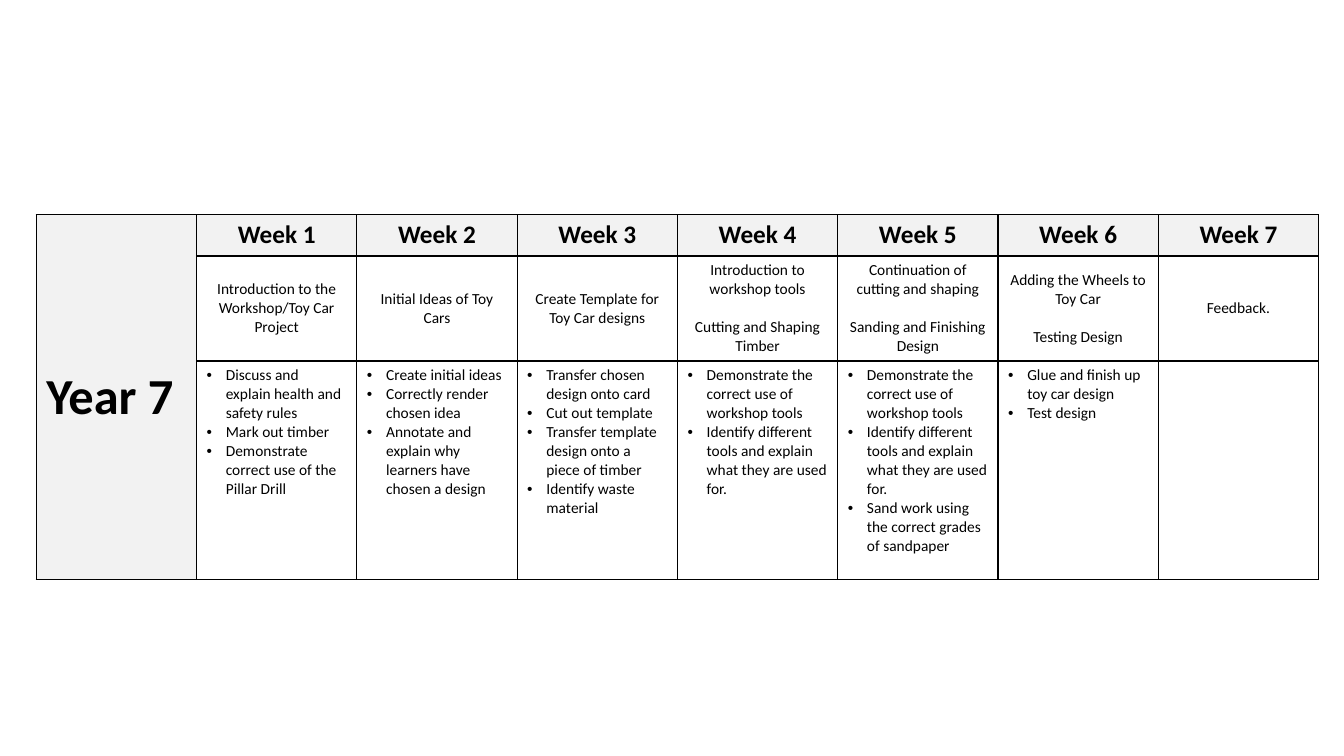
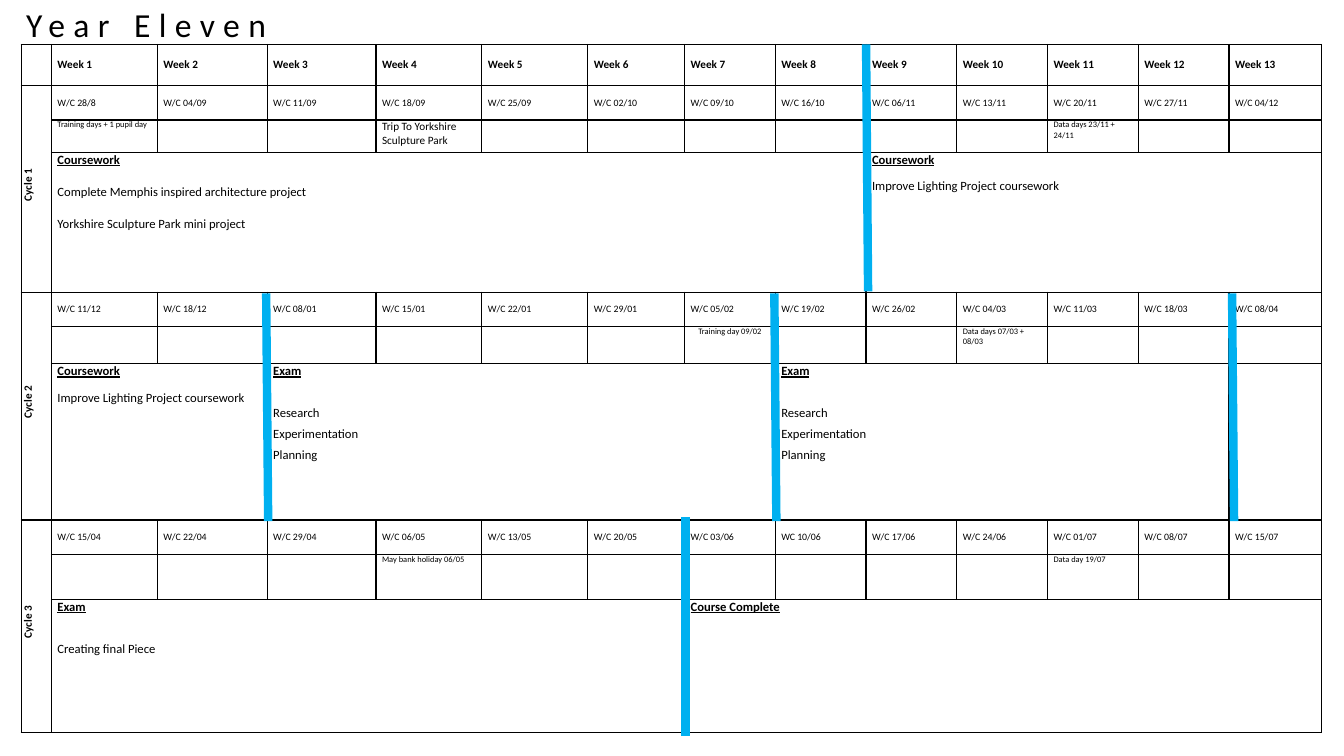
from lxml import etree
from pptx import Presentation, util as u
from pptx.dml.color import RGBColor
from pptx.enum import shapes, text
from pptx.oxml.ns import qn

COLORS = {"ink": "000000", "paper": "FFFFFF", "heading": "F2F2F2", "divider": "00B0F0"}
FONT = "Calibri"
CENTER = text.PP_ALIGN.CENTER
MIDDLE = text.MSO_ANCHOR.MIDDLE

YEAR_7_WEEKS = [
    (["Introduction to the Workshop/Toy Car Project"],
     ["Discuss and explain health and safety rules", "Mark out timber",
      "Demonstrate correct use of the Pillar Drill"]),
    (["Initial Ideas of Toy Cars"],
     ["Create initial ideas", "Correctly render chosen idea",
      "Annotate and explain why learners have chosen a design"]),
    (["Create Template for Toy Car designs"],
     ["Transfer chosen design onto card", "Cut out template",
      "Transfer template design onto a piece of timber", "Identify waste material"]),
    (["Introduction to workshop tools", "Cutting and Shaping Timber"],
     ["Demonstrate the correct use of workshop tools",
      "Identify different tools and explain what they are used for."]),
    (["Continuation of cutting and shaping", "Sanding and Finishing Design"],
     ["Demonstrate the correct use of workshop tools",
      "Identify different tools and explain what they are used for.",
      "Sand work using the correct grades of sandpaper"]),
    (["Adding the Wheels to Toy Car", "Testing Design"],
     ["Glue and finish up toy car design", "Test design"]),
    (["Feedback."], []),
]

EXAM_STAGES = ["Research", "Experimentation", "Planning"]
LIGHTING = ["Improve Lighting Project coursework"]
CYCLES = [
    {
        "dates": ["W/C 28/8", "W/C 04/09", "W/C 11/09", "W/C 18/09", "W/C 25/09", "W/C 02/10",
                  "W/C 09/10", "W/C 16/10", "W/C 06/11", "W/C 13/11", "W/C 20/11", "W/C 27/11",
                  "W/C 04/12"],
        "notes": {1: ("Training days + 1 pupil day", 6, None),
                  4: ("Trip To Yorkshire Sculpture Park", 8, None),
                  11: ("Data days 23/11 + 24/11", 6, None)},
        "blocks": [(1, 8, "Coursework", ["Complete Memphis inspired architecture project",
                                         "Yorkshire Sculpture Park mini project"], 12, 12),
                   (9, 13, "Coursework", LIGHTING, 8, 0)],
    },
    {
        "dates": ["W/C 11/12", "W/C 18/12", "W/C 08/01", "W/C 15/01", "W/C 22/01", "W/C 29/01",
                  "W/C 05/02", "W/C 19/02", "W/C 26/02", "W/C 04/03", "W/C 11/03", "W/C 18/03",
                  "W/C 08/04"],
        "notes": {7: ("Training day 09/02", 6, CENTER),
                  10: ("Data days 07/03 + 08/03", 6, None)},
        "blocks": [(1, 2, "Coursework", LIGHTING, 8, 0),
                   (3, 7, "Exam", EXAM_STAGES, 19, 4),
                   (8, 12, "Exam", EXAM_STAGES, 19, 4)],
    },
    {
        "dates": ["W/C 15/04", "W/C 22/04", "W/C 29/04", "W/C 06/05", "W/C 13/05", "W/C 20/05",
                  "W/C 03/06", "WC 10/06", "W/C 17/06", "W/C 24/06", "W/C 01/07", "W/C 08/07",
                  "W/C 15/07"],
        "notes": {4: ("May bank holiday 06/05", 6, None), 11: ("Data day 19/07", 6, None)},
        "blocks": [(1, 6, "Exam", ["Creating final Piece"], 19, 0),
                   (7, 13, "Course Complete", [], 0, 0)],
    },
]
DIVIDERS = [
    (8.59, 0.44, 8.61, 2.89),
    (2.64, 2.91, 2.66, 5.17),
    (7.68, 2.91, 7.7, 5.17),
    (6.8, 5.13, 6.8, 7.3),
    (12.22, 2.91, 12.24, 5.17),
]


def color(name):
    return RGBColor.from_string(COLORS[name])


def style_font(font, size, bold=False, underline=None):
    font.name = FONT
    font.size = u.Pt(size)
    font.bold = bold
    font.underline = underline
    font.color.rgb = color("ink")


def outline_cell(cell):
    properties = cell._tc.get_or_add_tcPr()
    for side in ("a:lnL", "a:lnR", "a:lnT", "a:lnB"):
        border = etree.SubElement(properties, qn(side), w=str(u.Pt(1)))
        fill = etree.SubElement(border, qn("a:solidFill"))
        etree.SubElement(fill, qn("a:srgbClr"), val=COLORS["ink"])


def add_grid(slide, left, top, widths, heights, margins):
    frame = slide.shapes.add_table(len(heights), len(widths), u.Inches(left), u.Inches(top),
                                   u.Inches(sum(widths)), u.Inches(sum(heights)))
    table = frame.table
    table.first_row = False
    table.horz_banding = False
    for column, width in zip(table.columns, widths):
        column.width = u.Inches(width)
    for row, height in zip(table.rows, heights):
        row.height = u.Inches(height)
    side, end = margins
    for cell in table.iter_cells():
        outline_cell(cell)
        fill_cell(cell, "paper")
        cell.margin_left = cell.margin_right = u.Inches(side)
        cell.margin_top = cell.margin_bottom = u.Inches(end)
    return table


def fill_cell(cell, name):
    cell.fill.solid()
    cell.fill.fore_color.rgb = color(name)


def add_bullet(paragraph):
    properties = paragraph._p.get_or_add_pPr()
    properties.set("marL", str(u.Inches(0.19)))
    properties.set("indent", str(u.Inches(-0.19)))
    etree.SubElement(properties, qn("a:buFont"), typeface="Arial")
    etree.SubElement(properties, qn("a:buChar"), char="•")


def write_cell(cell, lines, size, bold=False, align=None, anchor=None, gap=0, bullets=False):
    cell.vertical_anchor = anchor
    frame = cell.text_frame
    for index, line in enumerate(lines):
        paragraph = frame.add_paragraph() if index else frame.paragraphs[0]
        paragraph.text = line
        paragraph.alignment = align
        if index and gap:
            paragraph.space_before = u.Pt(gap)
        if bullets:
            add_bullet(paragraph)
        style_font(paragraph.font, size, bold)


def write_block(table, row, block):
    first, last, heading, lines, heading_gap, line_gap = block
    cell = table.cell(row, first)
    cell.merge(table.cell(row, last))
    write_cell(cell, [heading, *lines], 9, gap=line_gap)
    paragraphs = cell.text_frame.paragraphs
    style_font(paragraphs[0].font, 9, bold=True, underline=True)
    if lines:
        paragraphs[1].space_before = u.Pt(heading_gap)


def write_cycle(table, number, cycle):
    row = 3 * number - 2
    label = table.cell(row, 0)
    label.merge(table.cell(row + 2, 0))
    write_cell(label, [f"Cycle {number}"], 8, bold=True, align=CENTER, anchor=MIDDLE)
    label._tc.get_or_add_tcPr().set("vert", "vert270")
    label.text_frame.paragraphs[0]._p.get_or_add_pPr().set("marL", str(u.Inches(0.08)))
    for column, date in enumerate(cycle["dates"], 1):
        write_cell(table.cell(row, column), [date], 7, anchor=MIDDLE)
    for column, (note, size, align) in cycle["notes"].items():
        write_cell(table.cell(row + 1, column), [note], size, align=align)
    for block in cycle["blocks"]:
        write_block(table, row + 2, block)


def add_divider(slide, ends):
    line = slide.shapes.add_connector(shapes.MSO_CONNECTOR.STRAIGHT, *map(u.Inches, ends))
    line.line.color.rgb = color("divider")
    line.line.width = u.Pt(6)
    etree.SubElement(line._element.spPr, qn("a:effectLst"))


def add_title(slide, title):
    box = slide.shapes.add_textbox(u.Inches(0.16), u.Inches(-0.01), u.Inches(4.43), u.Inches(0.5))
    frame = box.text_frame
    frame.word_wrap = True
    run = frame.paragraphs[0].add_run()
    run.text = title
    style_font(run.font, 24)
    run._r.get_or_add_rPr().set("spc", "600")


def build_year_7(slide):
    table = add_grid(slide, 0.36, 2.13, [1.59] * 8, [0.41, 1.04, 2.17], (0.1, 0.05))
    year = table.cell(0, 0)
    year.merge(table.cell(2, 0))
    fill_cell(year, "heading")
    write_cell(year, ["Year 7"], 36, bold=True, anchor=MIDDLE)
    for week, (topics, tasks) in enumerate(YEAR_7_WEEKS, 1):
        heading = table.cell(0, week)
        fill_cell(heading, "heading")
        write_cell(heading, [f"Week {week}"], 18, bold=True, align=CENTER)
        write_cell(table.cell(1, week), topics, 11, align=CENTER, anchor=MIDDLE, gap=13.4)
        write_cell(table.cell(2, week), tasks, 11, bullets=True)


def build_year_11(slide):
    widths = [0.3, 1.05, 1.09, 1.08, 1.05, 1.05, 0.96] + [0.9] * 6 + [0.92]
    heights = [0.41, 0.34, 0.32, 1.39, 0.34, 0.37, 1.55, 0.34, 0.45, 1.32]
    table = add_grid(slide, 0.21, 0.44, widths, heights, (0.06, 0))
    for week in range(1, 14):
        write_cell(table.cell(0, week), [f"Week {week}"], 8, bold=True, anchor=MIDDLE)
    for number, cycle in enumerate(CYCLES, 1):
        write_cycle(table, number, cycle)
    for ends in DIVIDERS:
        add_divider(slide, ends)
    add_title(slide, "Year Eleven")


def main():
    presentation = Presentation()
    presentation.slide_width = u.Inches(13.33)
    presentation.slide_height = u.Inches(7.5)
    for build in (build_year_7, build_year_11):
        build(presentation.slides.add_slide(presentation.slide_layouts[6]))
    presentation.save("out.pptx")


if __name__ == "__main__":
    main()
